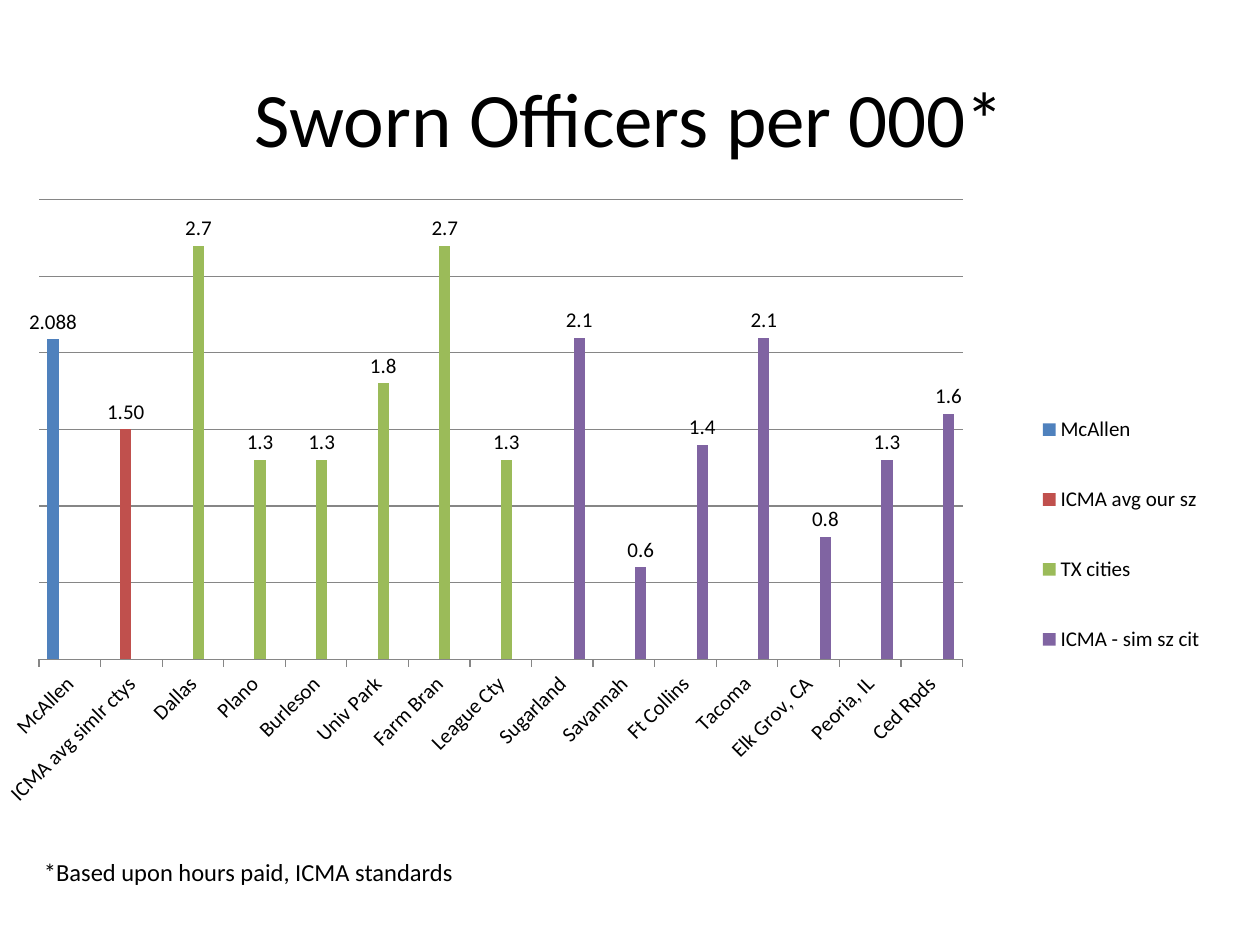
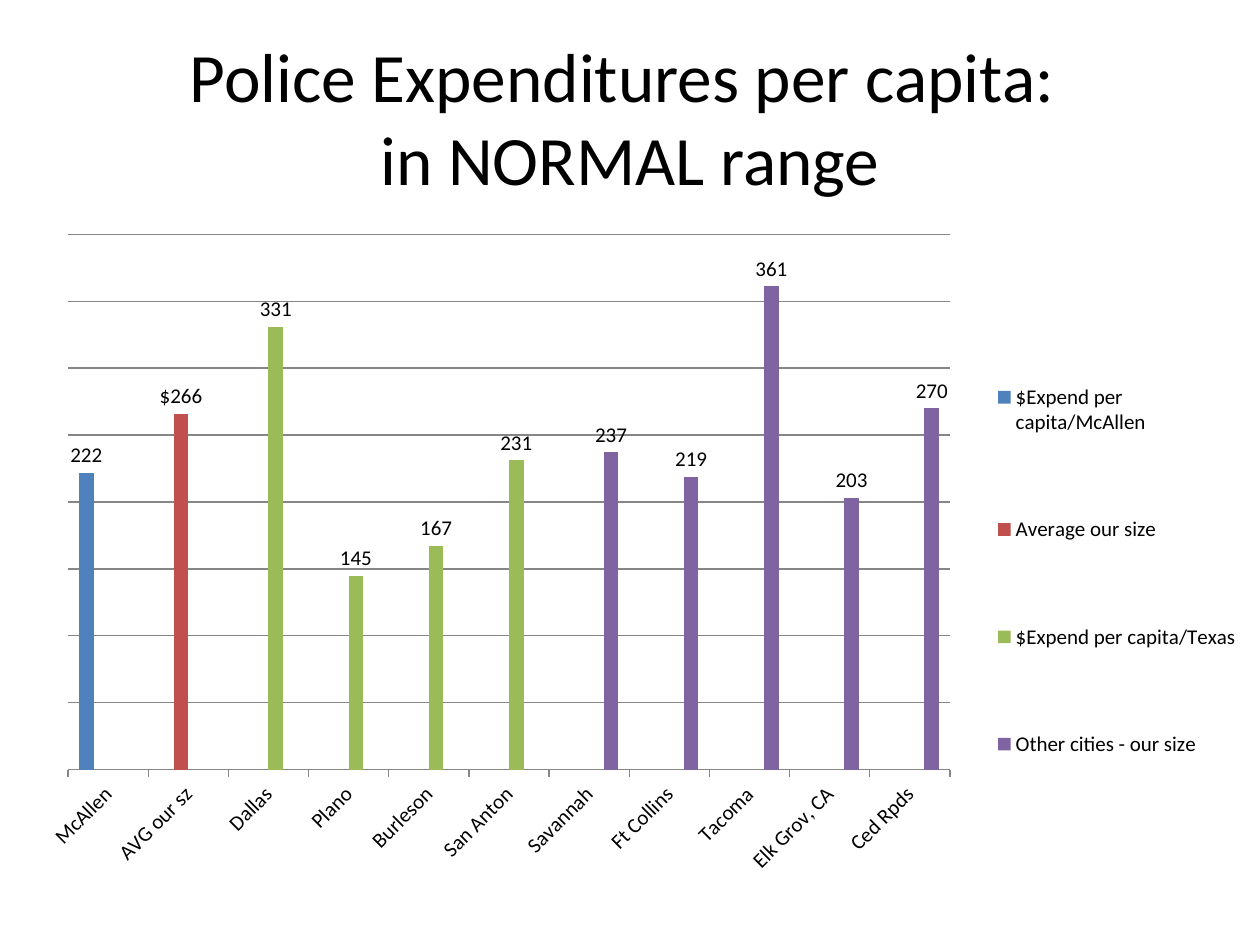
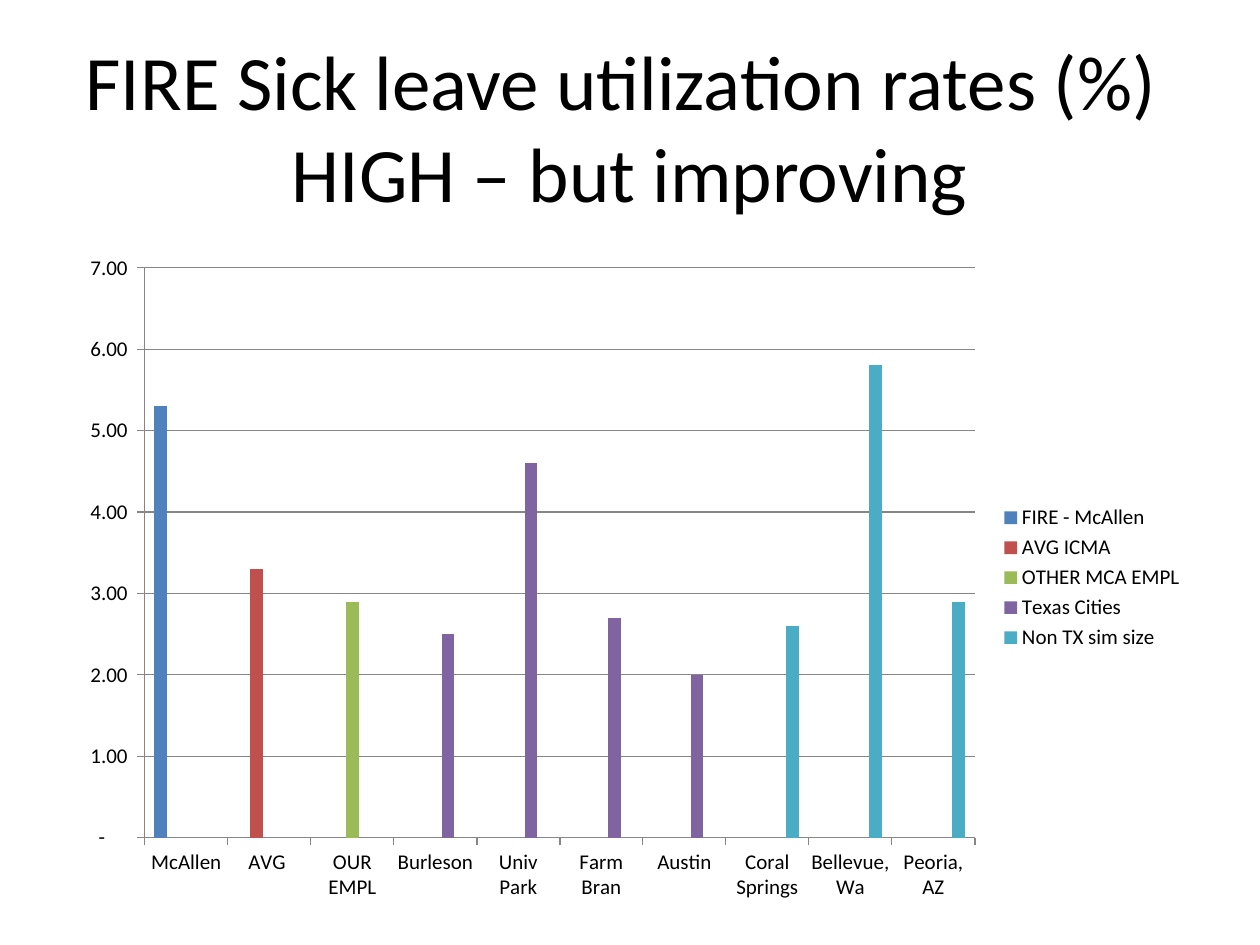
from lxml import etree
from pptx import Presentation
from pptx.chart.data import CategoryChartData as ChartData
from pptx.dml.color import RGBColor
from pptx.enum.chart import XL_CHART_TYPE as CT, XL_LABEL_POSITION as LP
from pptx.enum.chart import XL_LEGEND_POSITION as LEG, XL_TICK_MARK as TICK
from pptx.enum.text import MSO_ANCHOR as ANCHOR, PP_ALIGN as ALIGN
from pptx.oxml.ns import qn
from pptx.util import Pt

PX = 9144
FONT = "Calibri"
BLACK = RGBColor(0x00, 0x00, 0x00)
GRAY = RGBColor(0x86, 0x86, 0x86)
BLUE = RGBColor(0x4F, 0x81, 0xBD)
RED = RGBColor(0xC0, 0x50, 0x4D)
GREEN = RGBColor(0x9B, 0xBB, 0x59)
PURPLE = RGBColor(0x80, 0x64, 0xA2)
TEAL = RGBColor(0x4B, 0xAC, 0xC6)
PALETTE = [BLUE, RED, GREEN, PURPLE, TEAL]
ACCOUNTING = '_(* #,##0.00_);_(* \\(#,##0.00\\);_(* "-"??_);_(@_)'
STANDARD_TITLE = (50, 30, 900, 125)


def set_all(obj, **values):
    for name, value in values.items():
        setattr(obj, name, value)


class Deck:
    def __init__(self):
        self.prs = Presentation()
        set_all(self.prs, slide_width=1000 * PX, slide_height=750 * PX)

    def new_slide(self):
        self.slide = self.prs.slides.add_slide(self.prs.slide_layouts[6])

    def style(self, font, size):
        set_all(font, name=FONT, size=Pt(size))
        font.color.rgb = BLACK

    def text(self, box, text, size, align=ALIGN.LEFT, anchor=ANCHOR.TOP):
        sp = self.slide.shapes.add_textbox(*[v * PX for v in box])
        tf = sp.text_frame
        set_all(tf, word_wrap=True, vertical_anchor=anchor)
        p = tf.paragraphs[0]
        set_all(p, text=text, alignment=align)
        for r in p.runs:
            self.style(r.font, size)

    def title(self, text, size=44, box=STANDARD_TITLE):
        self.text(box, text, size, ALIGN.CENTER, ANCHOR.MIDDLE)

    def place(self, parent, index, box, chart_box, inner=False):
        for old in parent.findall(qn("c:layout")):
            parent.remove(old)
        layout = etree.Element(qn("c:layout"))
        parent.insert(index, layout)
        manual = etree.SubElement(layout, qn("c:manualLayout"))
        width, height = chart_box[2:]
        shares = [v / size for v, size in zip(box, (width, height) * 2)]
        parts = [("layoutTarget", "inner")] if inner else []
        parts += [("xMode", "edge"), ("yMode", "edge"), *zip("xywh", shares)]
        for tag, value in parts:
            etree.SubElement(manual, qn("c:" + tag), val=str(value))

    def chart(self, box, cats, groups, top, step, labels=False,
              plot_box=None, legend_box=None):
        data = ChartData()
        data.categories = cats
        start = 0
        for name, vals, *_ in groups:
            end = start + len(vals)
            data.add_series(name, [None] * start + vals + [None] * (len(cats) - end))
            start = end
        chart = self.slide.shapes.add_chart(
            CT.COLUMN_CLUSTERED, *[v * PX for v in box], data).chart
        set_all(chart, has_title=False, has_legend=True)
        self.style(chart.font, 12)
        set_all(chart.legend, position=LEG.RIGHT, include_in_layout=False)
        plot = chart.plots[0]
        set_all(plot, gap_width=150, overlap=0, vary_by_categories=False)
        for series, color, group in zip(plot.series, PALETTE, groups):
            series.format.fill.solid()
            series.format.fill.fore_color.rgb = color
            if labels:
                dl = series.data_labels
                set_all(dl, show_value=True, position=LP.OUTSIDE_END,
                        number_format=group[2] if len(group) > 2 else "General",
                        number_format_is_linked=False)
        self.axes(chart, top, step, labels)
        if plot_box:
            self.place(chart._chartSpace.chart.plotArea, 0, plot_box, box, True)
        if legend_box:
            self.place(chart.legend._element, 1, legend_box, box)

    def axes(self, chart, top, step, labels):
        cat, val = chart.category_axis, chart.value_axis
        set_all(val, minimum_scale=0, maximum_scale=top, major_unit=step,
                has_major_gridlines=True, visible=not labels)
        set_all(val.tick_labels, number_format=ACCOUNTING,
                number_format_is_linked=False)
        for axis in (cat, val):
            set_all(axis, major_tick_mark=TICK.OUTSIDE, minor_tick_mark=TICK.NONE)
        for part in (cat, val, val.major_gridlines):
            part.format.line.color.rgb = GRAY
        if labels:
            self.style(cat.tick_labels.font, 12)
            cat._element.find(qn("c:txPr")).find(qn("a:bodyPr")).set("rot", "-2700000")


def officers(deck):
    deck.new_slide()
    deck.title("Sworn Officers per 000*")
    deck.text((25, 675, 950, 34), "*Based upon hours paid, ICMA standards", 14)
    cats = ["McAllen", "ICMA avg simlr ctys", "Dallas", "Plano", "Burleson",
            "Univ Park", "Farm Bran", "League Cty", "Sugarland", "Savannah",
            "Ft Collins", "Tacoma", "Elk Grov, CA", "Peoria, IL", "Ced Rpds"]
    groups = [("McAllen", [2.088]),
              ("ICMA avg our sz", [1.5], "0.00"),
              ("TX cities", [2.7, 1.3, 1.3, 1.8, 2.7, 1.3]),
              ("ICMA - sim sz cit", [2.1, 0.6, 1.4, 2.1, 0.8, 1.3, 1.6])]
    deck.chart((0, 158, 1000, 592), cats, groups, 3, 0.5, labels=True,
               plot_box=(31, 0, 733, 365), legend_box=(805, 137, 170, 258))


def expenditures(deck):
    deck.new_slide()
    deck.title("Police Expenditures per capita: \nin NORMAL range", 39.6)
    cats = ["McAllen", "AVG our sz", "Dallas", "Plano", "Burleson", "San Anton",
            "Savannah", "Ft Collins", "Tacoma", "Elk Grov, CA", "Ced Rpds"]
    groups = [("$Expend per capita/McAllen", [222]),
              ("Average our size", [266], '"$"#,##0'),
              ("$Expend per capita/Texas", [331, 145, 167, 231]),
              ("Other cities - our size", [237, 219, 361, 203, 270])]
    deck.chart((0, 175, 1000, 575), cats, groups, 400, 50, labels=True,
               plot_box=(54, 11, 700, 425), legend_box=(789, 65, 195, 426))


def sick_leave(deck):
    deck.new_slide()
    deck.title("FIRE Sick leave utilization rates (%) \nHIGH – but improving",
               box=(50, 0, 900, 200))
    cats = ["McAllen", "AVG ", "OUR EMPL", "Burleson", "Univ Park", "Farm Bran",
            "Austin", "Coral Springs", "Bellevue, Wa", "Peoria, AZ"]
    groups = [("FIRE - McAllen", [5.3]),
              ("AVG ICMA", [3.3]),
              ("OTHER MCA EMPL", [2.9]),
              ("Texas Cities", [2.5, 4.6, 2.7, 2]),
              ("Non TX sim size", [2.6, 5.8, 2.9])]
    deck.chart((50, 192, 900, 533), cats, groups, 7, 1)


def main():
    deck = Deck()
    for build in (officers, expenditures, sick_leave):
        build(deck)
    deck.prs.save("out.pptx")


if __name__ == "__main__":
    main()
